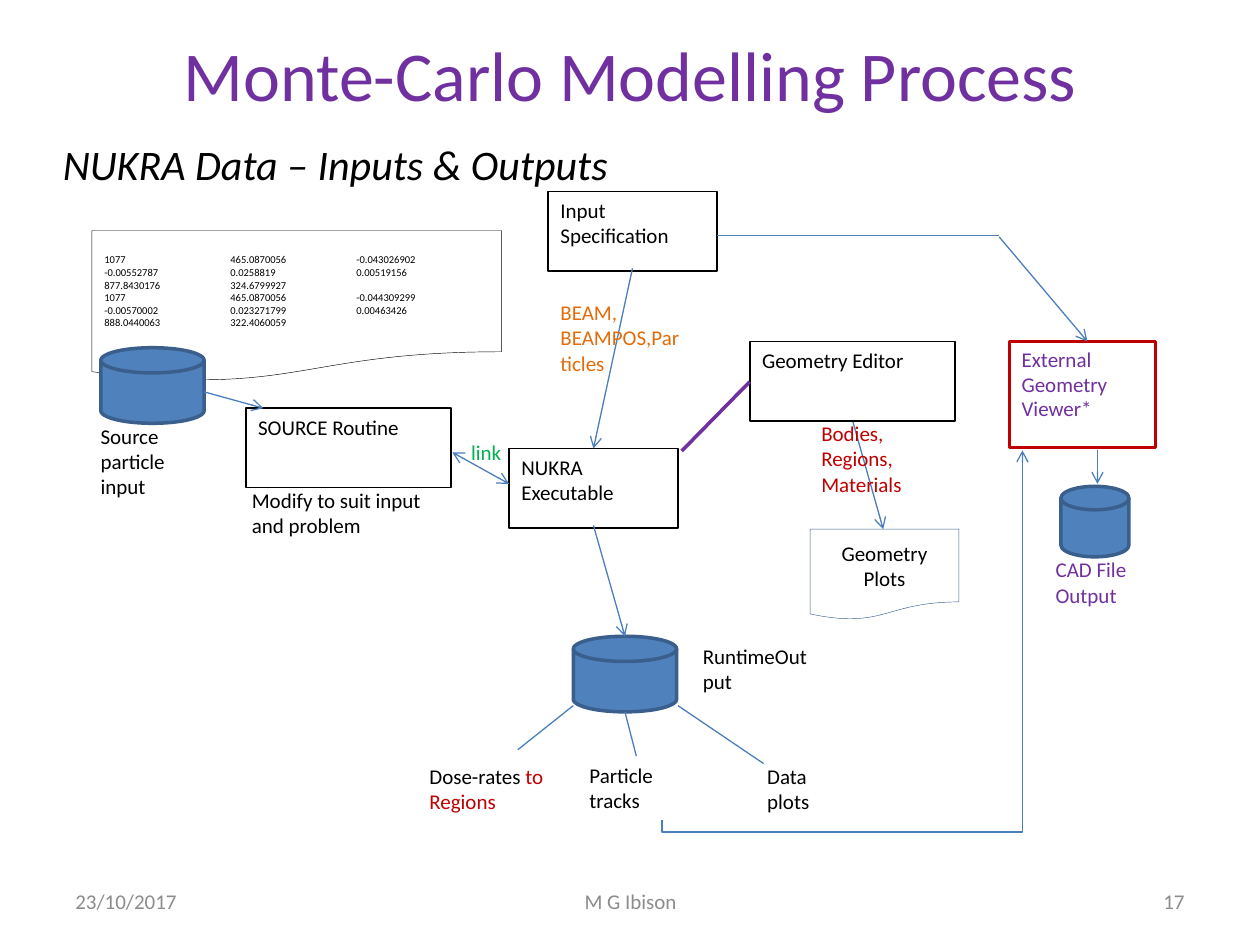
"""Build the Monte-Carlo modelling process slide with its NUKRA data-flow diagram."""
import pptx
import pptx.dml.color
import pptx.enum.shapes
import pptx.enum.text
import pptx.oxml.ns
import pptx.util
from lxml import etree
from pptx.util import Inches

COLORS = {
    "black": "000000", "white": "FFFFFF", "purple": "7030A0", "grey": "8C8C8C",
    "blue": "4B7EBC", "disk": "4F81BD", "edge": "3A5F8C", "red": "C00000",
    "green": "00B050", "orange": "E36C0A",
}
SHAPE = pptx.enum.shapes.MSO_SHAPE
CONNECTOR = pptx.enum.shapes.MSO_CONNECTOR
ALIGN = pptx.enum.text.PP_ALIGN
ANCHOR = pptx.enum.text.MSO_ANCHOR
qn = pptx.oxml.ns.qn


def rgb(name):
    return pptx.dml.color.RGBColor.from_string(COLORS[name])


def write(shape, paragraphs, size=12, align=ALIGN.LEFT, anchor=ANCHOR.TOP, italic=False):
    frame = shape.text_frame
    frame.word_wrap = True
    frame.vertical_anchor = anchor
    for index, runs in enumerate(paragraphs):
        paragraph = frame.add_paragraph() if index else frame.paragraphs[0]
        paragraph.alignment = align
        for text, color in runs:
            run = paragraph.add_run()
            run.text = text
            run.font.name = "Calibri"
            run.font.size = pptx.util.Pt(size)
            run.font.italic = italic
            run.font.color.rgb = rgb(color)


deck = pptx.Presentation()
deck.slide_width, deck.slide_height = Inches(10), Inches(7.5)
slide = deck.slides.add_slide(deck.slide_layouts[5])
shapes = slide.shapes

title = shapes.title
title.left, title.top, title.width, title.height = map(Inches, (0.5, 0.08, 9, 1))
write(title, [[("Monte-Carlo Modelling Process", "purple")]], 40, ALIGN.CENTER, ANCHOR.MIDDLE)

subtitle = shapes.add_textbox(*map(Inches, (0.4, 1.05, 9, 0.62)))
write(subtitle, [[("NUKRA Data – Inputs & Outputs", "black")]], 24, italic=True)
subtitle.text_frame.paragraphs[0].space_before = pptx.util.Pt(4.8)

for left, width, text, align in [
    (0.5, 2.33, "23/10/2017", ALIGN.LEFT),
    (3.42, 3.17, "M G Ibison", ALIGN.CENTER),
    (7.17, 2.33, "17", ALIGN.RIGHT),
]:
    footer = shapes.add_textbox(*map(Inches, (left, 6.95, width, 0.4)))
    write(footer, [[(text, "grey")]], 12, align, ANCHOR.MIDDLE)

source_rows = [
    "1077\t465.0870056\t-0.043026902\t-0.00552787\t0.0258819\t0.00519156\t877.8430176\t324.6799927",
    "1077\t465.0870056\t-0.044309299\t-0.00570002\t0.023271799\t0.00463426\t888.0440063\t322.4060059",
]
for place, edge, rows, size, align, tab_stops in [
    ((0.73, 1.83, 3.25, 1.2), "black", source_rows, 6, ALIGN.LEFT, (1, 2, 3)),
    ((6.43, 4.2, 1.18, 0.72), "edge", ["Geometry Plots"], 12, ALIGN.CENTER, ()),
]:
    document = shapes.add_shape(SHAPE.FLOWCHART_DOCUMENT, *map(Inches, place))
    document.shadow.inherit = False
    document.fill.background()
    document.line.color.rgb = rgb(edge)
    document.line.width = pptx.util.Pt(0.25)
    write(document, [[(row, "black")] for row in rows], size, align, ANCHOR.MIDDLE)
    if tab_stops:
        for row in document.text_frame.paragraphs:
            tabs = etree.SubElement(row._p.get_or_add_pPr(), qn("a:tabLst"))
            for stop in tab_stops:
                etree.SubElement(tabs, qn("a:tab"), pos=str(Inches(stop)), algn="l")

for place in [(0.8, 2.76, 0.82, 0.6), (4.55, 5.05, 0.82, 0.6), (8.42, 3.86, 0.54, 0.56)]:
    disk = shapes.add_shape(SHAPE.FLOWCHART_MAGNETIC_DISK, *map(Inches, place))
    disk.shadow.inherit = False
    disk.fill.solid()
    disk.fill.fore_color.rgb = rgb("disk")
    disk.line.color.rgb = rgb("edge")
    disk.line.width = pptx.util.Pt(2)

for place, text in [
    ((1.95, 3.24, 1.63, 0.63), "SOURCE Routine"),
    ((5.95, 2.71, 1.63, 0.63), "Geometry Editor"),
    ((4.35, 1.52, 1.34, 0.63), "Input Specification"),
    ((4.04, 3.56, 1.34, 0.63), "NUKRA Executable"),
    ((8.01, 2.71, 1.16, 0.84), "External Geometry Viewer*"),
]:
    external = text.startswith("External")
    step = shapes.add_shape(SHAPE.RECTANGLE, *map(Inches, place))
    step.shadow.inherit = False
    step.fill.background()
    step.line.color.rgb = rgb("red" if external else "black")
    step.line.width = pptx.util.Pt(1.5 if external else 1)
    write(step, [[(text, "purple" if external else "black")]])
    if external:
        step.fill.solid()
        step.fill.fore_color.rgb = rgb("white")
        step.text_frame.paragraphs[0].line_spacing = pptx.util.Pt(14)
        step.text_frame.paragraphs[0].space_after = pptx.util.Pt(12)

for kind, ends, color, width, arrows in [
    (CONNECTOR.STRAIGHT, (3.59, 3.59, 4.04, 3.84), "blue", 0.75, ("headEnd", "tailEnd")),
    (CONNECTOR.STRAIGHT, (1.62, 3.11, 2.09, 3.24), "blue", 0.75, ("tailEnd",)),
    (CONNECTOR.STRAIGHT, (5.69, 1.87, 7.93, 1.87), "blue", 0.75, ()),
    (CONNECTOR.STRAIGHT, (7.93, 1.88, 8.63, 2.71), "blue", 0.75, ("tailEnd",)),
    (CONNECTOR.STRAIGHT, (6.77, 3.35, 7.01, 4.2), "blue", 0.75, ("tailEnd",)),
    (CONNECTOR.STRAIGHT, (4.71, 4.17, 4.96, 5.05), "blue", 0.75, ("tailEnd",)),
    (CONNECTOR.STRAIGHT, (5.02, 2.13, 4.71, 3.56), "blue", 0.75, ("tailEnd",)),
    (CONNECTOR.STRAIGHT, (8.71, 3.57, 8.71, 3.84), "blue", 0.75, ("tailEnd",)),
    (CONNECTOR.STRAIGHT, (5.95, 3.03, 5.41, 3.58), "purple", 2, ()),
    (CONNECTOR.STRAIGHT, (4.55, 5.6, 4.11, 5.95), "blue", 0.75, ()),
    (CONNECTOR.STRAIGHT, (4.96, 5.65, 5.05, 6), "blue", 0.75, ()),
    (CONNECTOR.STRAIGHT, (5.38, 5.6, 6.06, 6.06), "blue", 0.75, ()),
    (CONNECTOR.ELBOW, (8.15, 6.47, 5.22, 3.61), "blue", 0.75, ("tailEnd",)),
]:
    flow = shapes.add_connector(kind, *map(Inches, ends))
    flow.line.color.rgb = rgb(color)
    flow.line.width = pptx.util.Pt(width)
    properties = flow.element.spPr
    for arrow in arrows:
        etree.SubElement(properties.find(qn("a:ln")), qn(f"a:{arrow}"), type="arrow")
    etree.SubElement(properties, qn("a:effectLst"))
    if kind == CONNECTOR.ELBOW:
        properties.find(qn("a:xfrm")).set("rot", "5400000")
        adjustments = properties.find(qn("a:prstGeom")).find(qn("a:avLst"))
        etree.SubElement(adjustments, qn("a:gd"), name="adj1", fmla="val -3400")

for place, runs in [
    ((8.28, 4.37, 0.93, 0.61), [("CAD File Output", "purple")]),
    ((0.7, 3.31, 0.93, 0.88), [("Source particle input", "black")]),
    ((3.64, 3.44, 0.69, 0.35), [("link", "green")]),
    ((5.48, 5.06, 1.03, 0.61), [("RuntimeOutput", "black")]),
    ((1.9, 3.82, 1.82, 0.61), [("Modify to suit input and problem", "black")]),
    ((3.31, 6.01, 1.16, 0.61), [("Dose-rates ", "black"), ("to Regions", "red")]),
    ((4.58, 6, 0.93, 0.61), [("Particle tracks", "black")]),
    ((5.99, 6.01, 0.71, 0.61), [("Data plots", "black")]),
    ((6.42, 3.29, 1.17, 0.88), [("Bodies, Regions, Materials", "red")]),
    ((4.35, 2.33, 1.17, 0.88), [("BEAM, BEAMPOS,Particles", "orange")]),
]:
    label = shapes.add_textbox(*map(Inches, place))
    write(label, [runs])

deck.save("out.pptx")
